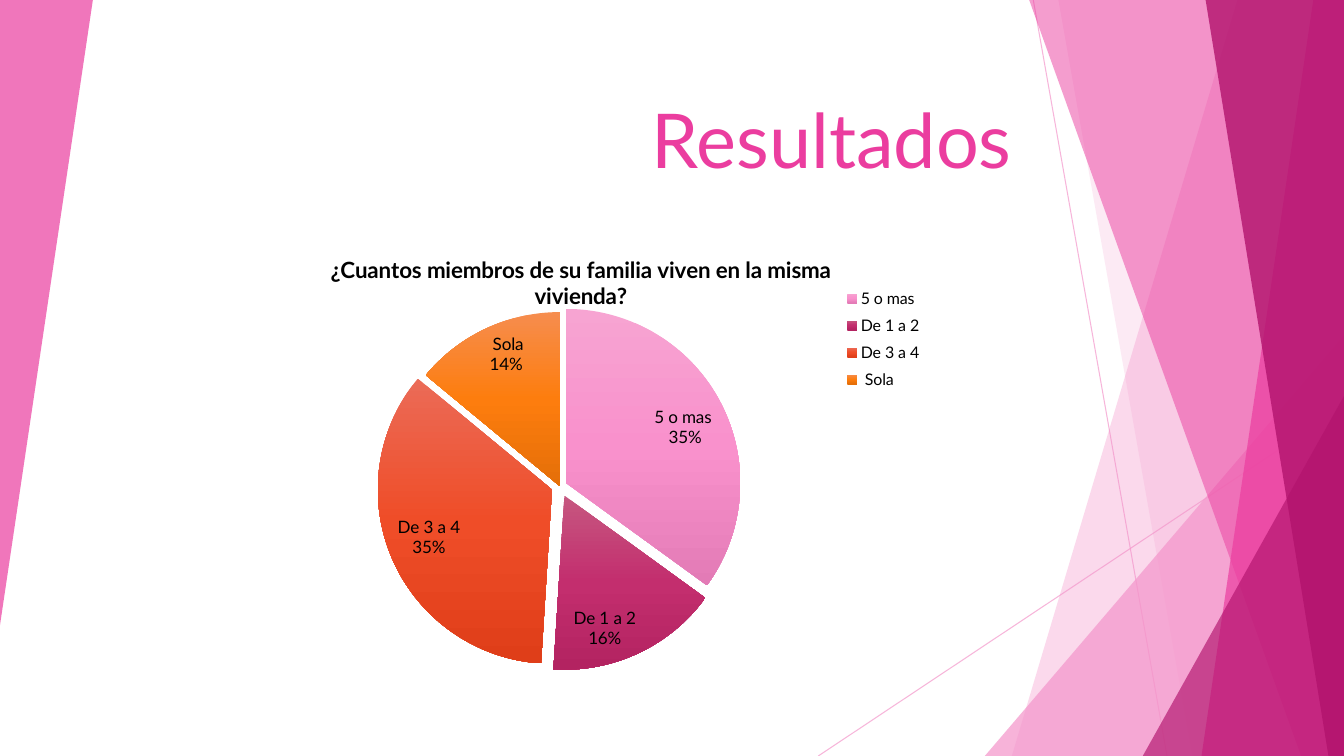
from lxml.etree import SubElement
from pptx import Presentation
from pptx.chart.data import CategoryChartData
from pptx.dml.color import RGBColor
from pptx.enum.chart import XL_CHART_TYPE, XL_LABEL_POSITION, XL_LEGEND_POSITION
from pptx.enum.shapes import MSO_CONNECTOR, MSO_SHAPE
from pptx.enum.text import MSO_ANCHOR, MSO_AUTO_SIZE, PP_ALIGN
from pptx.oxml import parse_xml
from pptx.oxml.ns import nsdecls, qn
from pptx.util import Cm, Pt

WIDTH, HEIGHT = 33.87, 19.05
COLORS = {"light": "F496CB", "pink": "EB3D9F", "plum": "B2136D", "text": "000000"}
SLICES = [
    ("5 o mas ", 35, 4, ("F7A4D2", "F991CC", "E37BB6")),
    ("De 1 a 2", 16, 6, ("C65780", "C32E6E", "B32361")),
    ("De 3 a 4", 35, 5, ("EB6B57", "EF4D28", "DF3E19")),
    (" Sola", 14, 0, ("F68D4E", "FD7D0E", "E56F08")),
]


class ResultsSlide:
    font_name = "Lato"

    def __init__(self, deck):
        self.slide = deck.slides.add_slide(deck.slide_layouts[5])
        self.shapes = self.slide.shapes

    def color(self, target, name, opacity=100):
        target.solid()
        target.fore_color.rgb = RGBColor.from_string(COLORS[name])
        if opacity < 100:
            srgb = target._xPr.find(".//" + qn("a:srgbClr"))
            SubElement(srgb, qn("a:alpha"), val=str(opacity * 1000))

    def style_font(self, font, size, bold=False, name="text"):
        font.name, font.size, font.bold = self.font_name, Pt(size), bold
        font.color.rgb = RGBColor.from_string(COLORS[name])

    def paint(self, shape, name, opacity):
        shape.shadow.inherit = False
        shape.line.fill.background()
        self.color(shape.fill, name, opacity)

    def ray(self, start, end):
        ray = self.shapes.add_connector(
            MSO_CONNECTOR.STRAIGHT, *(Cm(v) for v in (*start, *end)))
        ray.line.width = Pt(0.75)
        self.color(ray.line.fill, "light", 70)
        SubElement(ray._element.spPr, qn("a:effectLst"))

    def band(self, top_left, bottom_left, name, opacity):
        corners = [(top_left, -0.02), (WIDTH, -0.02), (WIDTH, HEIGHT), (bottom_left, HEIGHT)]
        points = [(Cm(x), Cm(y)) for x, y in corners]
        outline = self.shapes.build_freeform(*points[0])
        outline.add_line_segments(points[1:], close=True)
        self.paint(outline.convert_to_shape(), name, opacity)

    def wedge(self, box, name, opacity, rotation=0):
        wedge = self.shapes.add_shape(MSO_SHAPE.ISOSCELES_TRIANGLE, *(Cm(v) for v in box))
        wedge.adjustments[0] = 1
        wedge.rotation = rotation
        self.paint(wedge, name, opacity)

    def title(self, text, box):
        title = self.shapes.title
        title.left, title.top, title.width, title.height = (Cm(v) for v in box)
        frame = title.text_frame
        frame.text = text
        frame.word_wrap = True
        frame.auto_size = MSO_AUTO_SIZE.NONE
        frame.vertical_anchor = MSO_ANCHOR.BOTTOM
        heading = frame.paragraphs[0]
        heading.alignment = PP_ALIGN.RIGHT
        self.style_font(heading.runs[0].font, 54, name="pink")

    def place(self, part, inner=False, **position):
        for old in part.findall(qn("c:layout")):
            part.remove(old)
        target = '<c:layoutTarget val="inner"/>' if inner else ""
        modes = "".join(f'<c:{k}Mode val="edge"/>' for k in "xy")
        values = "".join(f'<c:{k} val="{v}"/>' for k, v in position.items())
        layout = parse_xml(
            f'<c:layout {nsdecls("c")}><c:manualLayout>{target}{modes}{values}'
            "</c:manualLayout></c:layout>")
        leading = part.find(qn("c:tx"))
        if leading is None:
            leading = part.find(qn("c:legendPos"))
        if leading is None:
            part.insert(0, layout)
        else:
            leading.addnext(layout)

    def slice_style(self, index, explosion, shades):
        stops = "".join(
            f'<a:gs pos="{i * 50000}"><a:srgbClr val="{shade}"/></a:gs>'
            for i, shade in enumerate(shades))
        return parse_xml(
            f'<c:dPt {nsdecls("c", "a")}><c:idx val="{index}"/><c:bubble3D val="0"/>'
            f'<c:explosion val="{explosion}"/><c:spPr><a:gradFill><a:gsLst>{stops}</a:gsLst>'
            '<a:lin ang="5400000" scaled="0"/></a:gradFill><a:ln><a:noFill/></a:ln>'
            "</c:spPr></c:dPt>")

    def pie(self, question, box):
        answers = CategoryChartData()
        answers.categories = [label for label, *_ in SLICES]
        answers.add_series("Series 1", [share for _, share, *_ in SLICES])
        chart = self.shapes.add_chart(
            XL_CHART_TYPE.PIE, *(Cm(v) for v in box), answers).chart
        self.style_font(chart.font, 10)

        chart.has_title = True
        chart.chart_title.text_frame.text = question
        heading = chart.chart_title.text_frame.paragraphs[0].runs[0]
        self.style_font(heading.font, 16, bold=True)
        self.place(chart.chart_title._element, x=0.15, y=0.04)

        chart.has_legend = True
        chart.legend.position = XL_LEGEND_POSITION.CORNER
        chart.legend.include_in_layout = False
        self.style_font(chart.legend.font, 11.4)
        self.place(chart.legend._element, x=0.86, y=0.11, w=0.13, h=0.26)

        plot = chart.plots[0]
        plot.vary_by_categories = True
        self.place(plot._element.getparent(), inner=True, x=0, y=0.18, w=0.95, h=0.78)
        answer_series = plot.series[0]
        categories = answer_series._element.find(qn("c:cat"))
        for index, (_, _, explosion, shades) in enumerate(SLICES):
            categories.addprevious(self.slice_style(index, explosion, shades))

        labels = answer_series.data_labels
        labels.show_value = False
        labels.show_percentage = True
        labels.show_category_name = True
        labels.position = XL_LABEL_POSITION.INSIDE_END
        self.style_font(labels.font, 12.2)


def main():
    deck = Presentation()
    deck.slide_width, deck.slide_height = Cm(WIDTH), Cm(HEIGHT)
    results = ResultsSlide(deck)
    results.ray((26.04, 0), (29.41, HEIGHT))
    results.ray((WIDTH, 10.24), (20.62, HEIGHT))
    results.band(31.19, 25.5, "light", 36)
    results.band(26.67, 30.05, "light", 20)
    results.wedge((24.82, 8.46, 9.05, 10.59), "light", 72)
    results.band(25.93, 32.79, "pink", 50)
    results.band(33.1, 30.28, "pink", 70)
    results.band(30.38, 33.48, "plum", 80)
    results.wedge((28.8, 9.98, 5.07, 9.07), "plum", 66)
    results.wedge((0, 0, 2.34, 15.75), "pink", 70, rotation=180)
    results.title("Resultados", (4.19, 0.18, 21.56, 4.57))
    results.pie("¿Cuantos miembros de su familia viven en la misma vivienda?",
                (5.51, 5.84, 18.11, 11.25))
    deck.save("out.pptx")


if __name__ == "__main__":
    main()
